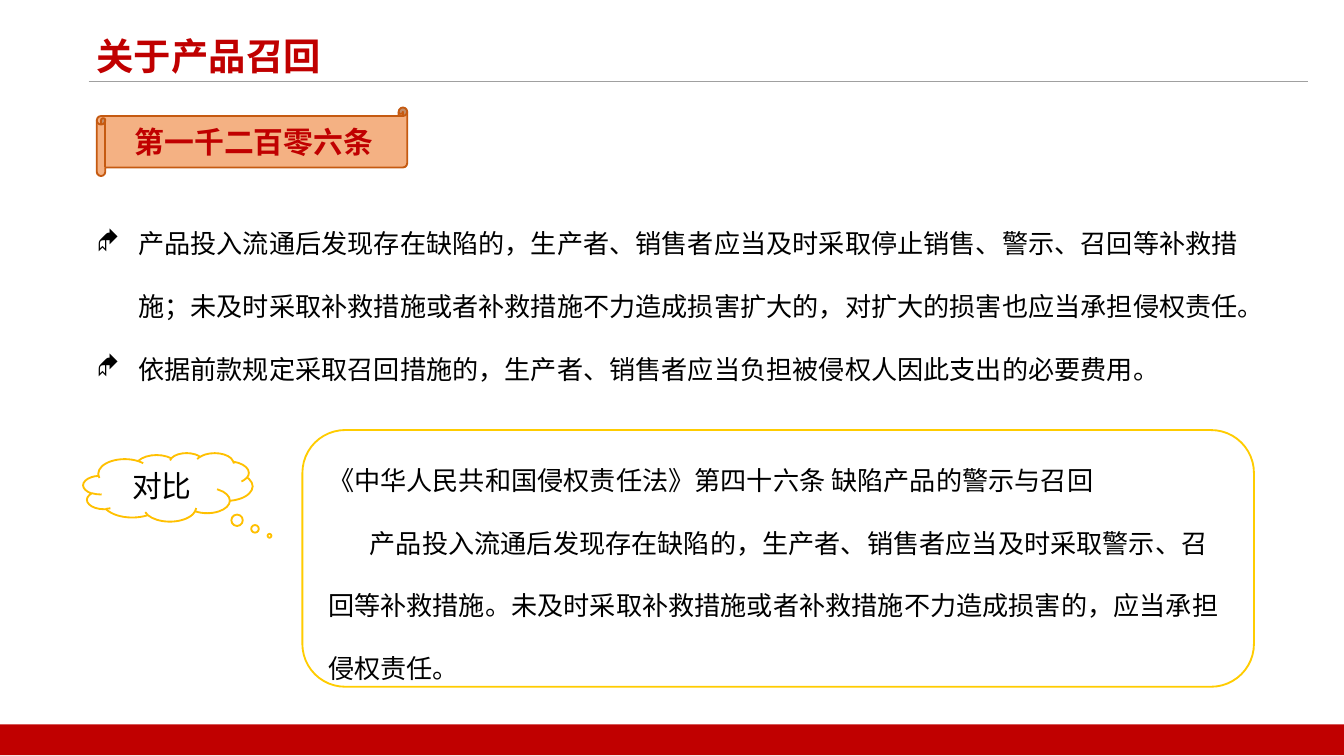
from lxml import etree
from pptx import Presentation
from pptx.dml.color import RGBColor
from pptx.enum.shapes import MSO_CONNECTOR, MSO_SHAPE
from pptx.enum.text import MSO_ANCHOR, PP_ALIGN
from pptx.oxml.ns import qn
from pptx.util import Inches, Pt

RECT = MSO_SHAPE.RECTANGLE
SCROLL = MSO_SHAPE.HORIZONTAL_SCROLL
CLOUD = MSO_SHAPE.CLOUD_CALLOUT
ROUND = MSO_SHAPE.ROUNDED_RECTANGLE
STRAIGHT = MSO_CONNECTOR.STRAIGHT
MIDDLE = MSO_ANCHOR.MIDDLE
LEFT = PP_ALIGN.LEFT
CENTER = PP_ALIGN.CENTER

FONT = "Noto Sans CJK SC"
RED = RGBColor(0xC0, 0x00, 0x00)
BLACK = RGBColor(0x00, 0x00, 0x00)
WHITE = RGBColor(0xFF, 0xFF, 0xFF)
GRAY = RGBColor(0xA0, 0xA0, 0xA0)
PEACH = RGBColor(0xF4, 0xB1, 0x83)
BROWN = RGBColor(0xC5, 0x5A, 0x11)
AMBER = RGBColor(0xFF, 0xC0, 0x00)
YELLOW = RGBColor(0xFF, 0xCC, 0x00)

RULES = [
    "产品投入流通后发现存在缺陷的，生产者、销售者应当及时采取停止销售、警示、召回等补救措施；"
    "未及时采取补救措施或者补救措施不力造成损害扩大的，对扩大的损害也应当承担侵权责任。",
    "依据前款规定采取召回措施的，生产者、销售者应当负担被侵权人因此支出的必要费用。",
]
OLD_LAW = [
    "《中华人民共和国侵权责任法》第四十六条 缺陷产品的警示与召回",
    "产品投入流通后发现存在缺陷的，生产者、销售者应当及时采取警示、召回等补救措施。"
    "未及时采取补救措施或者补救措施不力造成损害的，应当承担侵权责任。",
]


class Painter:
    def __init__(self, slide):
        self.slide = slide

    def shape(self, kind, box, fill=None, line=None):
        item = self.slide.shapes.add_shape(kind, *map(Inches, box))
        item.shadow.inherit = False
        if fill is None:
            item.fill.background()
        else:
            item.fill.solid()
            item.fill.fore_color.rgb = fill
        if line is None:
            item.line.fill.background()
        else:
            item.line.color.rgb = line
            item.line.width = Pt(1)
        item.text_frame.vertical_anchor = MIDDLE
        return item

    def box(self, box):
        return self.slide.shapes.add_textbox(*map(Inches, box))

    def rule(self, start, end, color):
        line = self.slide.shapes.add_connector(
            STRAIGHT, *map(Inches, start + end))
        line.line.color.rgb = color
        line.line.width = Pt(0.5)
        etree.SubElement(line._element.spPr, qn("a:effectLst"))

    def text(self, item, lines, size, color=BLACK, bold=False,
             align=LEFT, space=None):
        frame = item.text_frame
        frame.word_wrap = True
        frame.text = "\n".join(lines)
        for para in frame.paragraphs:
            para.alignment = align
            para.line_spacing = space
            for run in para.runs:
                font = run.font
                font.size = Pt(size)
                font.bold = bold
                font.color.rgb = color
                font.name = FONT
                east = etree.SubElement(run._r.get_or_add_rPr(), qn("a:ea"))
                east.set("typeface", FONT)
        return frame.paragraphs

    def indent(self, para, first, left=0):
        props = para._p.get_or_add_pPr()
        props.set("marL", str(Inches(left)))
        props.set("indent", str(Inches(first)))
        return props

    def bullet(self, para):
        props = self.indent(para, -0.31, 0.31)
        etree.SubElement(props, qn("a:buFont")).set("typeface", "Wingdings")
        etree.SubElement(props, qn("a:buChar")).set("char", "◆")


def main():
    deck = Presentation()
    deck.slide_width = Inches(10)
    deck.slide_height = deck.slide_width * 9 // 16
    art = Painter(deck.slides.add_slide(deck.slide_layouts[6]))

    art.rule((0.66, 0.61), (9.73, 0.61), GRAY)
    title = art.box((0.62, 0.2, 2.08, 0.51))
    art.text(title, ["关于产品召回"], 20, RED, True)
    art.shape(RECT, (0, 5.39, 10, 0.23), RED)

    scroll = art.shape(SCROLL, (0.72, 0.8, 2.31, 0.51), PEACH, BROWN)
    art.text(scroll, ["第一千二百零六条"], 16, RED, True, CENTER)

    rules = art.box((0.62, 1.41, 8.71, 1.43))
    for para in art.text(rules, RULES, 14, space=2):
        art.bullet(para)

    cloud = art.shape(CLOUD, (0.62, 3.37, 1.26, 0.51), WHITE, AMBER)
    cloud.adjustments[0] = 0.6
    cloud.adjustments[1] = 0.71
    art.text(cloud, ["对比"], 16, align=CENTER)

    panel = art.shape(ROUND, (2.25, 3.2, 7.08, 1.91), line=YELLOW)
    paras = art.text(panel, OLD_LAW, 14, space=2)
    art.indent(paras[1], 0.31)

    deck.save("out.pptx")


if __name__ == "__main__":
    main()
